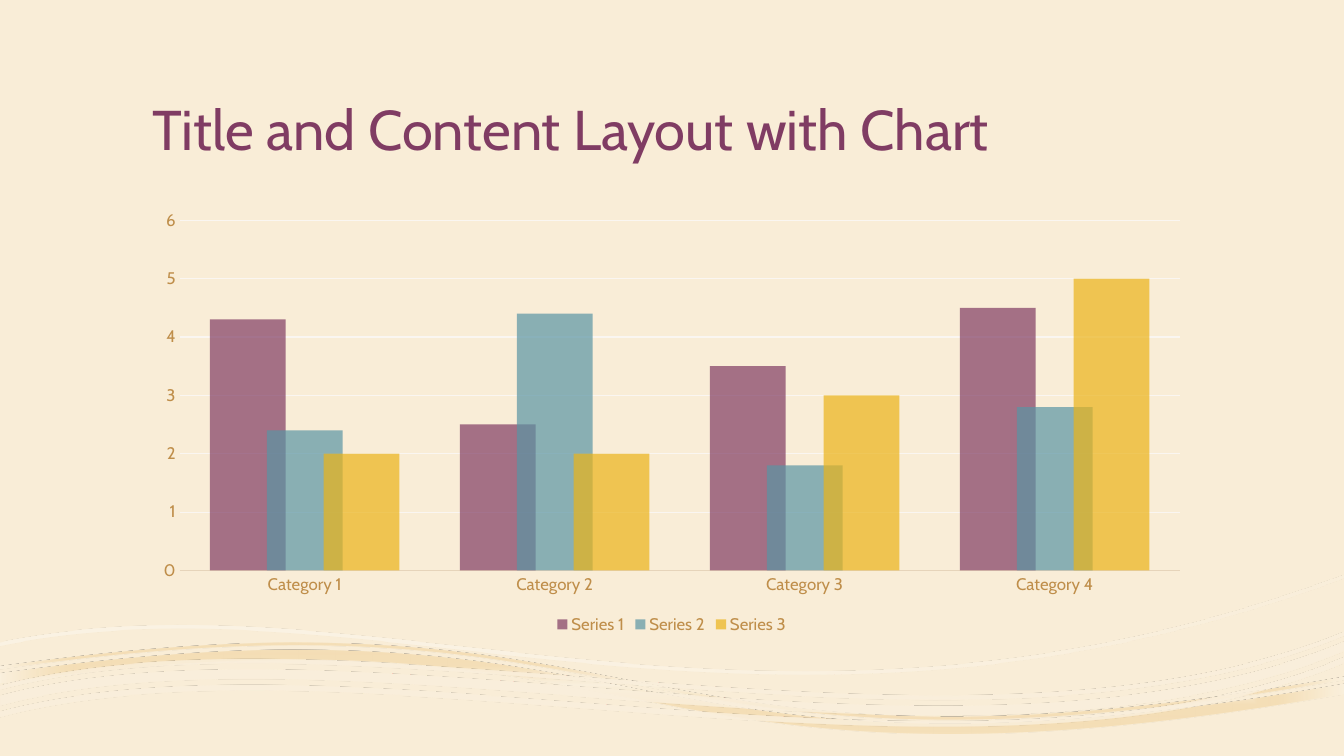
from dataclasses import dataclass
from math import cos, radians, sin
from typing import Any

from lxml.etree import SubElement
from pptx import Presentation
from pptx.chart.chart import Chart
from pptx.chart.data import CategoryChartData
from pptx.dml.color import RGBColor
from pptx.enum.chart import XL_CHART_TYPE, XL_LEGEND_POSITION, XL_TICK_MARK
from pptx.enum.text import MSO_ANCHOR, PP_ALIGN
from pptx.oxml.ns import qn
from pptx.slide import Slide
from pptx.util import Pt

Point = tuple[float, float]


@dataclass(frozen=True)
class Theme:
    font: str = "Cabin"
    background: str = "F9EDD7"
    title: str = "803C63"
    chart_text: str = "634823"
    label: str = "BF8E4A"
    axis_line: str = "E6D4BA"
    gridline: str = "FAF6F1"
    title_size: float = 40
    chart_size: float = 10
    label_size: float = 12
    bar_opacity: int = 70


@dataclass(frozen=True)
class GradientStop:
    position: int
    color: str
    opacity: int = 100


@dataclass(frozen=True)
class Gradient:
    stops: list[GradientStop]
    angle: int = 0
    shape: str = ""
    focus: tuple[int, int, int, int] = (50, 50, 50, 50)


@dataclass(frozen=True)
class Frame:
    left: float
    top: float
    width: float
    height: float

    def values(self) -> dict[str, int]:
        return {"left": Pt(self.left), "top": Pt(self.top),
                "width": Pt(self.width), "height": Pt(self.height)}


@dataclass(frozen=True)
class Wave:
    frame: Frame
    top: list[Point]
    bottom: list[Point]
    shifts: list[tuple[float, float]]
    gradient: Gradient


@dataclass(frozen=True)
class Bars:
    name: str
    values: list[float]
    color: str


THEME = Theme()
TILT = -3.5
TITLE_FRAME = Frame(101.7, 24, 756, 96)
CHART_FRAME = Frame(101.8, 144, 756, 312)
CATEGORIES = [f"Category {number}" for number in range(1, 5)]
SERIES = [
    Bars("Series 1", [4.3, 2.5, 3.5, 4.5], "803C63"),
    Bars("Series 2", [2.4, 4.4, 1.8, 2.8], "5A95A4"),
    Bars("Series 3", [2, 2, 3, 5], "EBB419"),
]
THIN_CURVE = [(0, 458.6), (268.6, 402.5), (542.9, 564.5), (960, 410.4)]
LOW_CURVE = [(0, 508.3), (251.3, 440.6), (687.6, 583.2), (960, 469.4)]
WAVES = [
    Wave(
        Frame(0.7, 440.6, 958.3, 97.2),
        [(0, 481), (89.3, 468.7), (159.8, 463.7), (220, 464.4),
         (482.4, 465.8), (531.4, 563), (960, 488.2)],
        [(0, 488.2), (480.2, 419.8), (433.4, 587.5), (960, 495.4)],
        [(0, 0), (-5, -10.1)],
        Gradient([GradientStop(0, "FAF1DF", 90), GradientStop(18, "F4DEB7"),
                  GradientStop(37, "F4DDB3", 90), GradientStop(100, "FAF1DF")], shape="shape"),
    ),
    Wave(
        Frame(2.2, 423.4, 961.2, 123.1), THIN_CURVE, THIN_CURVE, [(0, 2.6)],
        Gradient([GradientStop(36, "FFFFFF", 30), GradientStop(100, "F9EDD7", 48)], angle=45),
    ),
    Wave(
        Frame(-0.7, 450, 961.9, 82.8), LOW_CURVE, LOW_CURVE,
        [(0, 4), (-11.2, -4.3), (-18.4, -15.5)],
        Gradient([GradientStop(36, "FFFFFF", 47), GradientStop(100, "FAEFDC", 82)],
                 shape="rect", focus=(100, 100, 0, 0)),
    ),
]


def apply(target: Any, values: dict[str, Any]) -> None:
    for name, value in values.items():
        setattr(target, name, value)


def format_font(font: Any, size: float, color: str) -> None:
    apply(font, {"name": THEME.font, "size": Pt(size), "bold": False})
    font.color.rgb = RGBColor.from_string(color)


def add_opacity(color_element: Any, opacity: int) -> None:
    SubElement(color_element, qn("a:alpha"), val=str(opacity * 1000))


def level(curve: list[Point], shift: float, frame: Frame) -> list[Point]:
    middle_x, middle_y = frame.left + frame.width / 2, frame.top + frame.height / 2
    turn = radians(-TILT)
    offsets = [(x - middle_x, y + shift - middle_y) for x, y in curve]
    return [(Pt(middle_x + x * cos(turn) - y * sin(turn)),
             Pt(middle_y + x * sin(turn) + y * cos(turn))) for x, y in offsets]


def bend_edges(outline: Any, join: int) -> None:
    corner = 0
    for step in list(outline):
        if step.tag != qn("a:lnTo"):
            corner = 0
            continue
        corner += 1
        if corner == join:
            continue
        place = corner - (join if corner > join else 0)
        if place % 3 == 1:
            curve = step
            curve.tag = qn("a:cubicBezTo")
        else:
            curve.append(step[0])
            outline.remove(step)


def fill_gradient(shape: Any, gradient: Gradient) -> None:
    shape.fill.gradient()
    fill = shape.element.spPr.find(qn("a:gradFill"))
    for child in list(fill):
        fill.remove(child)
    stops = SubElement(fill, qn("a:gsLst"))
    for stop in gradient.stops:
        entry = SubElement(stops, qn("a:gs"), pos=str(stop.position * 1000))
        color = SubElement(entry, qn("a:srgbClr"), val=stop.color)
        if stop.opacity < 100:
            add_opacity(color, stop.opacity)
    if gradient.shape:
        center = SubElement(fill, qn("a:path"), {"path": gradient.shape})
        sides = {side: str(share * 1000) for side, share in zip("ltrb", gradient.focus)}
        SubElement(center, qn("a:fillToRect"), sides)
    else:
        SubElement(fill, qn("a:lin"), ang=str(gradient.angle * 60000), scaled="0")


def draw_wave(page: Slide, wave: Wave) -> None:
    ribbons = [level(wave.top, top, wave.frame) + level(wave.bottom, bottom, wave.frame)[::-1]
               for top, bottom in wave.shifts]
    builder = page.shapes.build_freeform(*ribbons[0][0])
    for index, ribbon in enumerate(ribbons):
        if index:
            builder.move_to(*ribbon[0])
        builder.add_line_segments(ribbon[1:], close=True)
    shape = builder.convert_to_shape()
    frame = wave.frame.values()
    outline = next(shape.element.iter(qn("a:path")))
    for point in outline.iter(qn("a:pt")):
        point.set("x", str(int(point.get("x")) + shape.left - frame["left"]))
        point.set("y", str(int(point.get("y")) + shape.top - frame["top"]))
    outline.set("w", str(frame["width"]))
    outline.set("h", str(frame["height"]))
    bend_edges(outline, len(wave.top))
    apply(shape, {**frame, "rotation": TILT})
    fill_gradient(shape, wave.gradient)
    shape.line.fill.background()
    shape.shadow.inherit = False


def format_title(page: Slide) -> None:
    title = page.shapes.title
    apply(title, TITLE_FRAME.values())
    apply(title.text_frame, {"text": "Title and Content Layout with Chart",
                             "vertical_anchor": MSO_ANCHOR.BOTTOM, "word_wrap": True})
    para = title.text_frame.paragraphs[0]
    apply(para, {"alignment": PP_ALIGN.LEFT, "line_spacing": 0.9})
    format_font(para.runs[0].font, THEME.title_size, THEME.title)


def format_axes(chart: Chart) -> None:
    for axis in (chart.category_axis, chart.value_axis):
        apply(axis, {"major_tick_mark": XL_TICK_MARK.NONE, "minor_tick_mark": XL_TICK_MARK.NONE})
        format_font(axis.tick_labels.font, THEME.label_size, THEME.label)
    apply(chart.value_axis, {"minimum_scale": 0, "maximum_scale": 6, "major_unit": 1})
    chart.value_axis.format.line.fill.background()
    for line, color, width in (
        (chart.category_axis.format.line, THEME.axis_line, 1.25),
        (chart.value_axis.major_gridlines.format.line, THEME.gridline, 0.75),
    ):
        line.color.rgb = RGBColor.from_string(color)
        line.width = Pt(width)


def draw_chart(page: Slide) -> None:
    data = CategoryChartData()
    data.categories = CATEGORIES
    for bars in SERIES:
        data.add_series(bars.name, bars.values)
    chart = page.shapes.add_chart(XL_CHART_TYPE.COLUMN_CLUSTERED,
                                  *CHART_FRAME.values().values(), data).chart
    apply(chart, {"has_title": False, "has_legend": True})
    format_font(chart.font, THEME.chart_size, THEME.chart_text)
    apply(chart.legend, {"position": XL_LEGEND_POSITION.BOTTOM, "include_in_layout": False})
    format_font(chart.legend.font, THEME.label_size, THEME.label)
    format_axes(chart)
    plot = chart.plots[0]
    apply(plot, {"gap_width": 80, "overlap": 25, "vary_by_categories": False})
    for series, bars in zip(plot.series, SERIES):
        series.format.fill.solid()
        series.format.fill.fore_color.rgb = RGBColor.from_string(bars.color)
    for element in chart.element.iter(qn("c:ser")):
        add_opacity(next(element.iter(qn("a:srgbClr"))), THEME.bar_opacity)


def main() -> None:
    deck = Presentation()
    apply(deck, {"slide_width": Pt(960), "slide_height": Pt(540)})
    page = deck.slides.add_slide(deck.slide_layouts.get_by_name("Title Only"))
    page.background.fill.solid()
    page.background.fill.fore_color.rgb = RGBColor.from_string(THEME.background)
    for wave in WAVES:
        draw_wave(page, wave)
    title = page.shapes.title.element
    title.getparent().append(title)
    format_title(page)
    draw_chart(page)
    deck.save("out.pptx")


if __name__ == "__main__":
    main()
